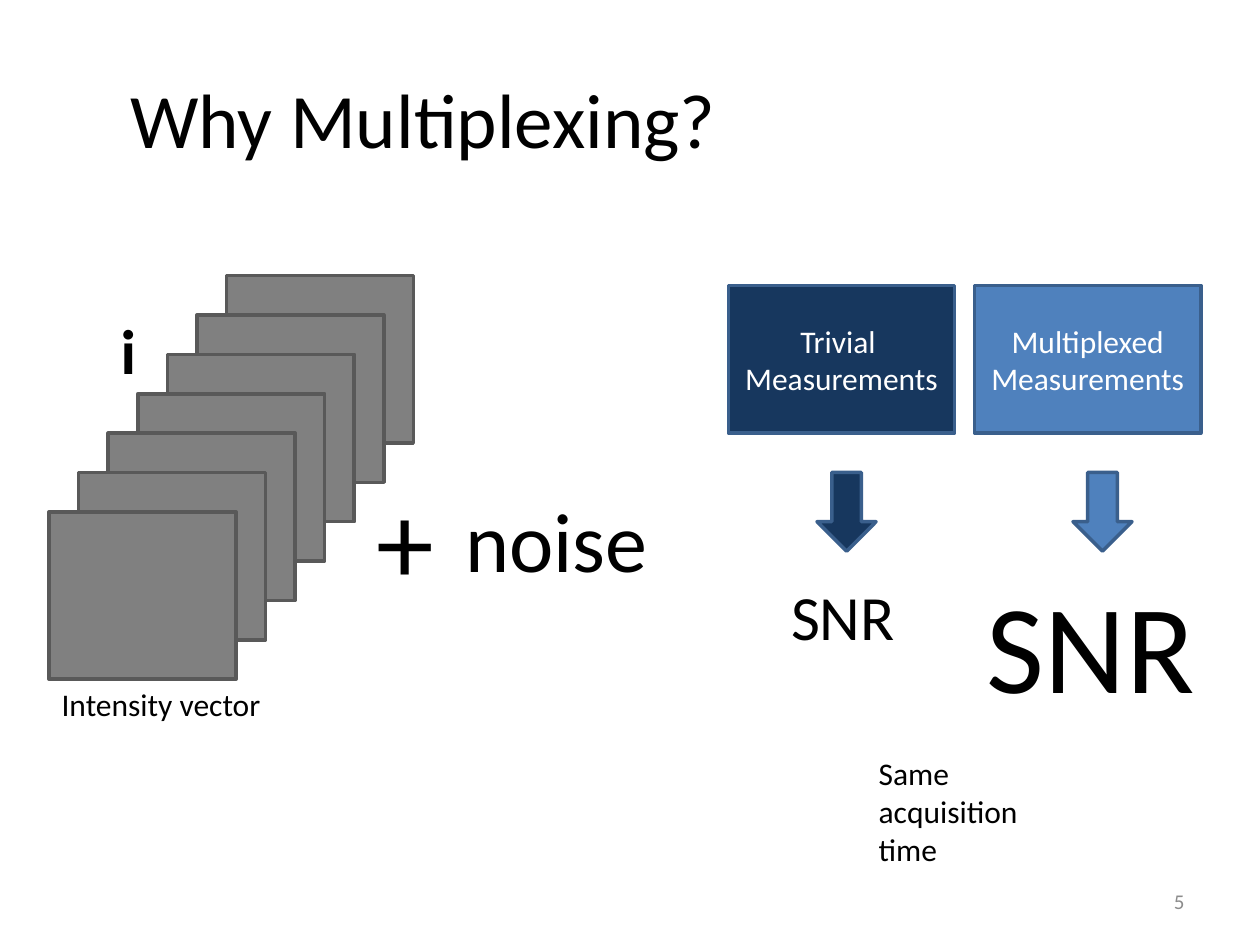
from pptx import Presentation
from pptx.dml.color import RGBColor
from pptx.enum.shapes import MSO_SHAPE
from pptx.enum.text import MSO_ANCHOR, MSO_AUTO_SIZE, PP_ALIGN
from pptx.util import Inches, Pt

RECTANGLE = MSO_SHAPE.RECTANGLE
RIGHT_ARROW = MSO_SHAPE.RIGHT_ARROW
TOP, MIDDLE = MSO_ANCHOR.TOP, MSO_ANCHOR.MIDDLE
LEFT, CENTER, RIGHT = PP_ALIGN.LEFT, PP_ALIGN.CENTER, PP_ALIGN.RIGHT
FIT_SHAPE = MSO_AUTO_SIZE.SHAPE_TO_FIT_TEXT
NO_FIT = MSO_AUTO_SIZE.NONE

SLIDE_WIDTH, SLIDE_HEIGHT = Inches(10), Inches(7.5)
COLUMNS, ROWS = 128, 96
FONT = "Calibri"
COLORS = {
    "text": "000000",
    "light text": "FFFFFF",
    "page number": "8C8C8C",
    "frame": "808080",
    "frame line": "595959",
    "trivial": "17375E",
    "multiplexed": "4F81BD",
    "line": "3A5F8C",
}


def color(name):
    return RGBColor.from_string(COLORS[name])


def place(column, row, columns, rows):
    """Turn grid columns and rows into left, top, width and height."""
    cell_width, cell_height = SLIDE_WIDTH / COLUMNS, SLIDE_HEIGHT / ROWS
    return (round(column * cell_width), round(row * cell_height),
            round(columns * cell_width), round(rows * cell_height))


def write(shape, text, size, color_name, align=LEFT, bold=False):
    text_frame = shape.text_frame
    text_frame.text = text
    for paragraph in text_frame.paragraphs:
        paragraph.alignment = align
        for run in paragraph.runs:
            run.font.name = FONT
            run.font.size = Pt(size)
            run.font.bold = bold
            run.font.color.rgb = color(color_name)


def add_text(shapes, cells, text, size, color_name="text", align=LEFT,
             bold=False, wrap=True, anchor=TOP, fit=FIT_SHAPE):
    box = shapes.add_textbox(*place(*cells))
    write(box, text, size, color_name, align, bold)
    box.text_frame.word_wrap = wrap
    box.text_frame.vertical_anchor = anchor
    box.text_frame.auto_size = fit


def add_block(shapes, kind, cells, fill, line="line"):
    block = shapes.add_shape(kind, *place(*cells))
    block.shadow.inherit = False
    block.fill.solid()
    block.fill.fore_color.rgb = color(fill)
    block.line.color.rgb = color(line)
    block.line.width = Pt(2)
    return block


def add_frame_stack(slide, count=7):
    """Stack the frames from back to front, each further down and left."""
    group = slide.shapes.add_group_shape()
    for index in range(count):
        cells = (23 - 3 * index, 28 + 4 * index, 19, 17)
        add_block(group.shapes, RECTANGLE, cells, "frame", "frame line")


def add_noise_term(slide):
    group = slide.shapes.add_group_shape()
    add_text(group.shapes, (37, 47, 10, 15.5), "+", 66)
    add_text(group.shapes, (46, 49, 24, 11.6), "noise", 48)


def add_measurement(slide, text, fill, column, arrow_column, snr_cells, snr_size):
    """Add a labelled box, its downward arrow and the resulting SNR."""
    box = add_block(slide.shapes, RECTANGLE, (column, 29, 23, 15), fill)
    write(box, text, 18, "light text", CENTER)
    box.text_frame.word_wrap = True
    box.text_frame.vertical_anchor = MIDDLE
    arrow = add_block(slide.shapes, RIGHT_ARROW, (arrow_column, 49, 8, 6), fill)
    arrow.rotation = 90
    add_text(slide.shapes, snr_cells, "SNR", snr_size, wrap=False)


def main():
    presentation = Presentation()
    presentation.slide_width, presentation.slide_height = SLIDE_WIDTH, SLIDE_HEIGHT
    slide = presentation.slides.add_slide(presentation.slide_layouts[6])

    add_frame_stack(slide)
    add_text(slide.shapes, (12, 4, 105, 16), "Why Multiplexing?", 44,
             anchor=MIDDLE, fit=NO_FIT)
    add_noise_term(slide)
    add_measurement(slide, "Trivial \nMeasurements", "trivial",
                    74, 82, (79.1, 58, 13.2, 9), 36)
    add_measurement(slide, "Multiplexed Measurements", "multiplexed",
                    99, 108, (99, 57, 24, 16.8), 72)
    add_text(slide.shapes, (88, 76, 23, 13), "Same acquisition time", 18)
    add_text(slide.shapes, (91.7, 89, 29.9, 5.1), "5", 12, "page number",
             RIGHT, anchor=MIDDLE, fit=NO_FIT)
    add_text(slide.shapes, (5, 69, 24, 5.1), "Intensity vector", 18)
    add_text(slide.shapes, (11, 31, 12, 9), "i", 36, bold=True)

    presentation.save("out.pptx")


if __name__ == "__main__":
    main()
